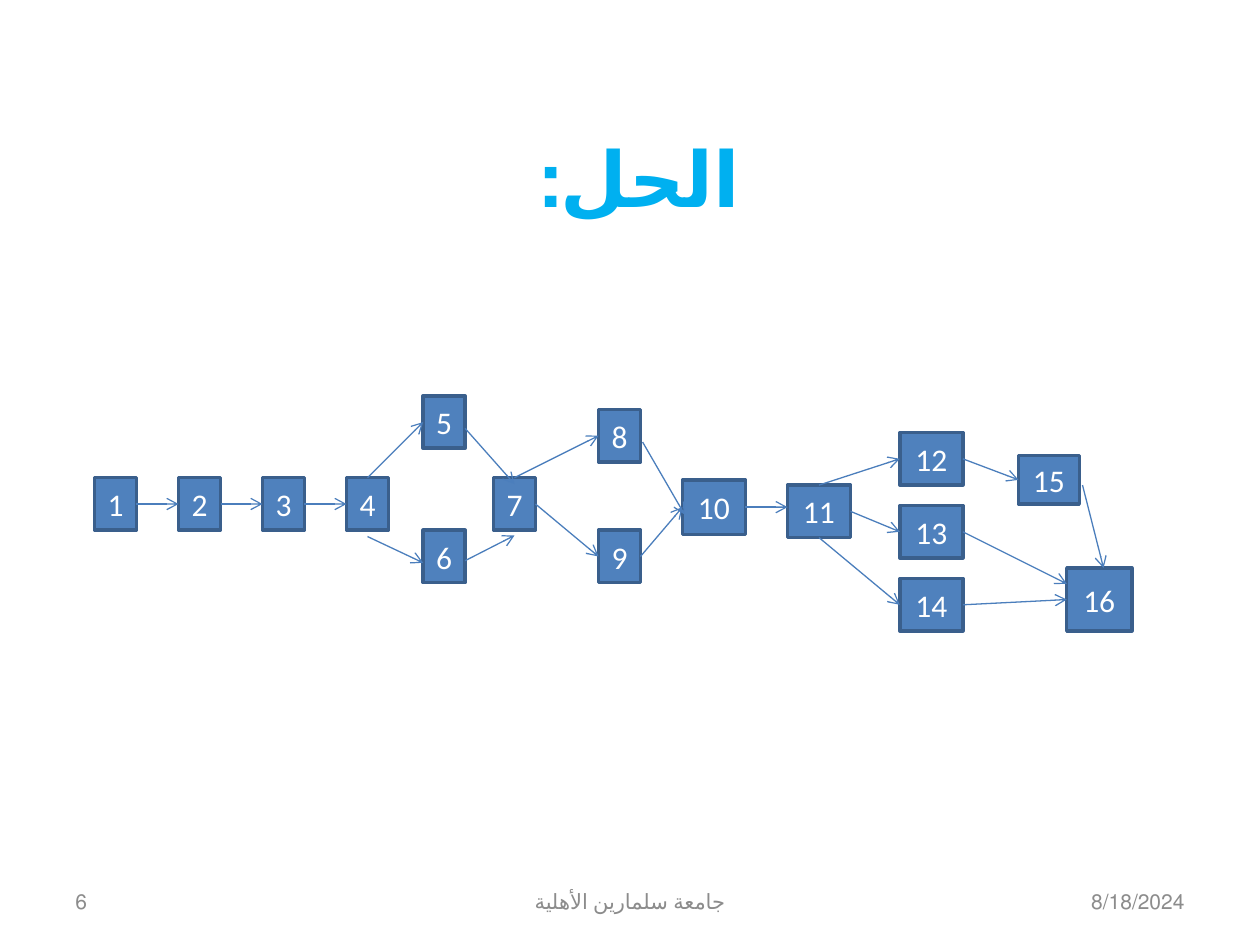
from dataclasses import dataclass

from lxml.etree import SubElement
from pptx import Presentation
from pptx.dml.color import RGBColor
from pptx.enum.lang import MSO_LANGUAGE_ID
from pptx.enum.shapes import MSO_CONNECTOR, MSO_SHAPE
from pptx.enum.text import MSO_ANCHOR, PP_ALIGN
from pptx.oxml.ns import qn
from pptx.util import Inches, Pt

FONT = "Calibri"
COLORS = {
    "title": "00B0F0",
    "footer": "8C8C8C",
    "box": "4F81BD",
    "border": "3A5F8C",
    "arrow": "4B7EBC",
    "number": "FFFFFF",
}
COLUMNS = 120  # grid of the slide: 120 columns by 90 rows of 1/12 inch
SLIDE_WIDTH, SLIDE_HEIGHT = Inches(10), Inches(7.5)
CELL = SLIDE_WIDTH / COLUMNS
TOP, LEFT, BOTTOM, RIGHT = range(4)


@dataclass(frozen=True)
class Node:
    number: int
    column: float
    row: float
    columns: float = 4
    rows: float = 5


@dataclass(frozen=True)
class Arrow:
    """Each end is a side of its node, or a free (column, row) point."""
    source: int
    target: int
    start: int | tuple[float, float] = RIGHT
    end: int | tuple[float, float] = LEFT


@dataclass(frozen=True)
class FooterText:
    text: str
    column: float
    columns: float
    alignment: PP_ALIGN


MAIN_ROW = 45.5
NODES = [
    *(Node(number, 1 + 8 * number, MAIN_ROW) for number in range(1, 5)),
    Node(7, 47, MAIN_ROW),
    Node(5, 40.3, 37.7),
    Node(6, 40.3, 50.5),
    Node(8, 57, 39),
    Node(9, 57, 50.5),
    Node(10, 65, 45.7, 6, 5.2),
    Node(11, 75, 46.2, 6),
    Node(16, 101.6, 54.1, 6.2, 6),
    Node(15, 97, 43.4, 5.8, 4.6),
    *(Node(number, 85.7, 41.2 + 6.95 * (number - 12), 6) for number in (14, 13, 12)),
]
ARROWS = [
    Arrow(1, 2),
    Arrow(2, 3),
    Arrow(3, 4),
    Arrow(10, 11, end=(75, 48.3)),
    Arrow(4, 5, TOP),
    Arrow(4, 6, (35, 51.1), (40.3, 53.6)),
    Arrow(6, 7, (44.3, 53.4), (49, 51)),
    Arrow(5, 7, (44.3, 40.8), (49, 46.1)),
    Arrow(7, 8, TOP),
    Arrow(7, 9),
    Arrow(9, 10),
    Arrow(8, 10, (61.2, 42.1), (65.2, 49)),
    Arrow(11, 12, TOP),
    Arrow(11, 14, BOTTOM),
    Arrow(11, 13),
    Arrow(12, 15),
    Arrow(14, 16),
    Arrow(15, 16, (103.1, 46.2), (105.1, 54.1)),
    Arrow(13, 16, end=(101.6, 55.6)),
]
FOOTER_TEXTS = [
    FooterText("8/18/2024", 86, 28, PP_ALIGN.RIGHT),
    FooterText("جامعة سلمارين الأهلية", 41, 38, PP_ALIGN.CENTER),
    FooterText("6", 6, 28, PP_ALIGN.LEFT),
]


def grid(*cells: float) -> list[int]:
    return [round(cell * CELL) for cell in cells]


def color(name: str) -> RGBColor:
    return RGBColor.from_string(COLORS[name])


def write(shape, text: str, size: float, color_name: str, alignment=PP_ALIGN.CENTER,
          bold: bool = False, right_to_left: bool = False) -> None:
    frame = shape.text_frame
    frame.text = text
    frame.word_wrap = True
    frame.vertical_anchor = MSO_ANCHOR.MIDDLE
    paragraph = frame.paragraphs[0]
    paragraph.alignment = alignment
    font = paragraph.runs[0].font
    font.name, font.size, font.bold = FONT, Pt(size), bold
    font.color.rgb = color(color_name)
    if right_to_left:
        paragraph._p.get_or_add_pPr().set("rtl", "1")
        font.language_id = MSO_LANGUAGE_ID.ARABIC


def draw_title(slide) -> None:
    title = slide.shapes.title
    title.left, title.top, title.width, title.height = grid(7, 11, 108, 11.6)
    write(title, "الحل:", 44, "title", bold=True, right_to_left=True)


def draw_footer(slide, footer: FooterText) -> None:
    box = slide.shapes.add_textbox(*grid(footer.column, 83.4, footer.columns, 4.8))
    write(box, footer.text, 12, "footer", footer.alignment, right_to_left=True)


def draw_node(slide, node: Node):
    shape = slide.shapes.add_shape(
        MSO_SHAPE.RECTANGLE, *grid(node.column, node.row, node.columns, node.rows))
    shape.shadow.inherit = False
    shape.fill.solid()
    shape.fill.fore_color.rgb = color("box")
    shape.line.color.rgb = color("border")
    shape.line.width = Pt(2)
    write(shape, str(node.number), 18, "number")
    return shape


def draw_arrow(slide, arrow: Arrow, boxes: dict) -> None:
    start = (0, 0) if isinstance(arrow.start, int) else arrow.start
    end = (0, 0) if isinstance(arrow.end, int) else arrow.end
    connector = slide.shapes.add_connector(MSO_CONNECTOR.STRAIGHT, *grid(*start, *end))
    if isinstance(arrow.start, int):
        connector.begin_connect(boxes[arrow.source], arrow.start)
    if isinstance(arrow.end, int):
        connector.end_connect(boxes[arrow.target], arrow.end)
    connector.line.color.rgb = color("arrow")
    connector.line.width = Pt(0.75)
    SubElement(connector.line._get_or_add_ln(), qn("a:tailEnd"), type="arrow")
    SubElement(connector._element.spPr, qn("a:effectLst"))


def main() -> None:
    presentation = Presentation()
    presentation.slide_width, presentation.slide_height = SLIDE_WIDTH, SLIDE_HEIGHT
    slide = presentation.slides.add_slide(presentation.slide_layouts[5])
    draw_title(slide)
    for footer in FOOTER_TEXTS:
        draw_footer(slide, footer)
    boxes = {node.number: draw_node(slide, node) for node in NODES}
    for arrow in ARROWS:
        draw_arrow(slide, arrow, boxes)
    presentation.save("out.pptx")


if __name__ == "__main__":
    main()
